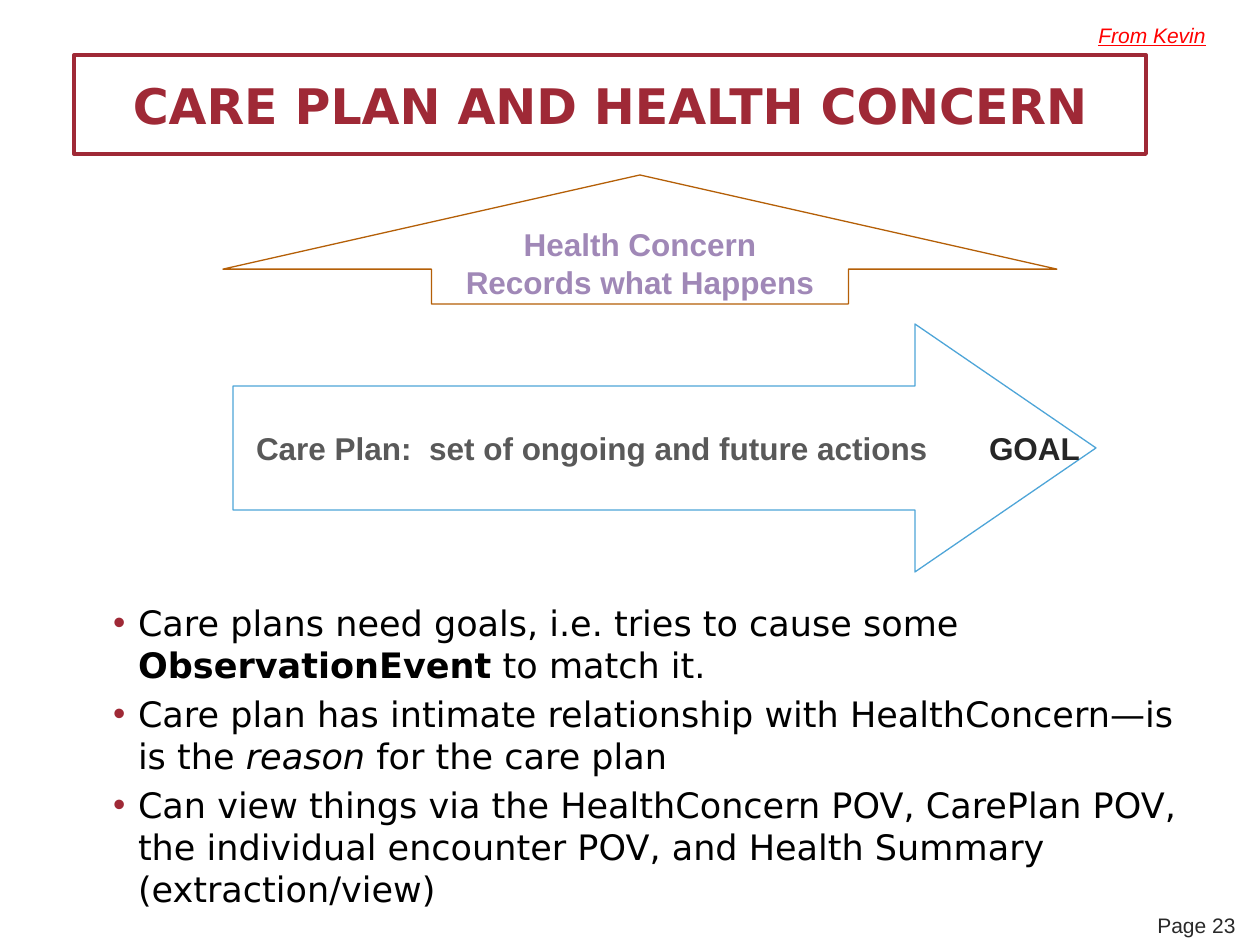
import pptx
import pptx.dml.color
import pptx.enum.shapes
import pptx.enum.text
import pptx.oxml.ns
import pptx.util
from lxml import etree

EMU_PER_PX = 914400 / 126
ALIGN = pptx.enum.text.PP_ALIGN
ANCHOR = pptx.enum.text.MSO_ANCHOR
SHAPE = pptx.enum.shapes.MSO_SHAPE
RED = "9F2936"


def px(n):
    return pptx.util.Emu(round(n * EMU_PER_PX))


def rgb(value):
    return pptx.dml.color.RGBColor.from_string(value)


def add_run(p, text, font="Arial", size=18, color="000000",
            bold=False, italic=False, underline=False):
    r = p.add_run()
    r.text = text
    f = r.font
    f.name, f.size = font, pptx.util.Pt(size)
    f.bold, f.italic, f.underline = bold, italic, underline
    f.color.rgb = rgb(color)


def add_child(parent, tag, **attrs):
    child = etree.SubElement(parent, pptx.oxml.ns.qn(tag))
    for name, value in attrs.items():
        child.set(name, str(value))
    return child


class SlideBuilder:
    def __init__(self, prs):
        self.s = prs.slides.add_slide(prs.slide_layouts[6])
        self.body = dict(font="DejaVu Sans", size=20)

    def fill_text(self, sp, paragraphs, align=ALIGN.LEFT, anchor=ANCHOR.TOP,
                  wrap=True, insets=None, **fmt):
        tf = sp.text_frame
        tf.word_wrap, tf.vertical_anchor = wrap, anchor
        if insets is not None:
            tf.margin_left, tf.margin_top, tf.margin_right, tf.margin_bottom = map(px, insets)
        for i, runs in enumerate(paragraphs):
            p = tf.paragraphs[0] if i == 0 else tf.add_paragraph()
            p.alignment = align
            for text, extra in runs:
                add_run(p, text, **{**fmt, **extra})
        return tf

    def text(self, box, paragraphs, **style):
        sp = self.s.shapes.add_textbox(*map(px, box))
        return self.fill_text(sp, paragraphs, **style)

    def outline(self, kind, box, line, width, paragraphs, adjustments=(), **style):
        sp = self.s.shapes.add_shape(kind, *map(px, box))
        sp.shadow.inherit = False
        sp.fill.background()
        sp.line.color.rgb = rgb(line)
        sp.line.width = pptx.util.Pt(width)
        for i, value in enumerate(adjustments):
            sp.adjustments[i] = value
        return self.fill_text(sp, paragraphs, anchor=ANCHOR.MIDDLE, **style)

    def bullets(self, box, paragraphs):
        tf = self.text(box, paragraphs, insets=(0, 0, 0, 0), **self.body)
        for p in tf.paragraphs:
            p.space_before = pptx.util.Pt(4)
            pPr = p._p.get_or_add_pPr()
            pPr.set("marL", str(px(25)))
            pPr.set("indent", str(px(-25)))
            add_child(add_child(pPr, "a:buClr"), "a:srgbClr", val=RED)
            add_child(pPr, "a:buFont", typeface="Arial")
            add_child(pPr, "a:buChar", char="•")

    def tab_stop(self, p, position):
        tabs = add_child(p._p.get_or_add_pPr(), "a:tabLst")
        add_child(tabs, "a:tab", pos=px(position), algn="l")


def main():
    prs = pptx.Presentation()
    prs.slide_width, prs.slide_height = px(1260), px(945)
    slide = SlideBuilder(prs)

    slide.text((1111, 906, 137, 38), [[("Page 23", {})]], size=12, color="292929",
               align=ALIGN.RIGHT, anchor=ANCHOR.BOTTOM)
    slide.outline(SHAPE.RECTANGLE, (74, 55, 1072, 99), RED, 2.25,
                  [[("CARE PLAN AND HEALTH CONCERN", {})]],
                  align=ALIGN.CENTER, insets=(0, 0, 0, 0),
                  font="DejaVu Sans", size=28, color=RED, bold=True)
    slide.bullets((113, 601, 1064, 307), [
        [("Care plans need goals, i.e. tries to cause some ", {}),
         ("ObservationEvent", {"bold": True}),
         (" to match it.", {})],
        [("Care plan has intimate relationship with HealthConcern—is is the ", {}),
         ("reason", {"italic": True}),
         (" for the care plan", {})],
        [("Can view things via the HealthConcern POV, CarePlan POV, the individual "
          "encounter POV, and Health Summary (extraction/view)", {})],
    ])
    plan = slide.outline(SHAPE.RIGHT_ARROW, (233, 324, 863, 248), "4EA5D8", 0.75,
                         [[("Care Plan:  set of ongoing and future actions\t", {"color": "595959"}),
                           ("GOAL", {"color": "262626"})]],
                         adjustments=(0.5, 0.73), wrap=False,
                         insets=(23, 6, 13, 6), bold=True)
    slide.tab_stop(plan.paragraphs[0], 733)
    slide.outline(SHAPE.UP_ARROW, (223, 175, 834, 129), "B45F07", 0.75,
                  [[("Health Concern", {})], [("Records what Happens", {})]],
                  adjustments=(0.5, 0.73), wrap=False, align=ALIGN.CENTER,
                  color="A088B7", bold=True)
    slide.text((1086, 16, 134, 38), [[("From Kevin", {})]], wrap=False,
               size=12, color="FF0000", italic=True, underline=True)

    prs.save("out.pptx")


if __name__ == "__main__":
    main()
